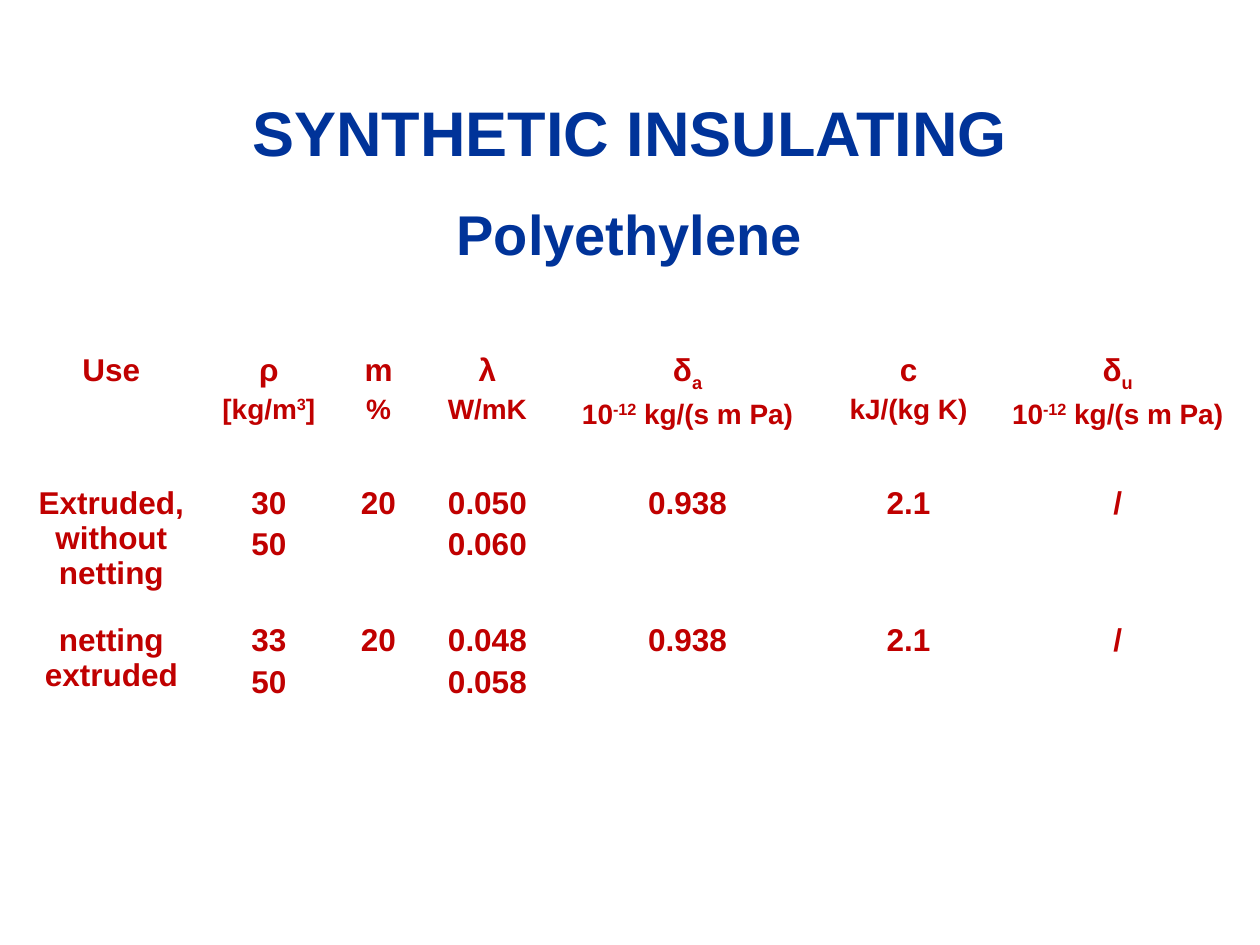
"""Build a slide with the properties of polyethylene insulation."""
from lxml.etree import SubElement as Sub
from pptx import Presentation as Deck
from pptx.dml.color import RGBColor as Rgb
from pptx.enum.text import MSO_ANCHOR as Anchor, PP_ALIGN as Align
from pptx.oxml.ns import qn
from pptx.util import Cm, Pt

BLUE, RED, WHITE = "003399", "C00000", "FFFFFF"
HEADS = [
    ("SYNTHETIC INSULATING", 36, (1.27, 1.91, 22.86, 1.47), Anchor.MIDDLE),
    ("Polyethylene", 32, (7.19, 3.89, 11, 1.6), Anchor.TOP),
]
PERM = [("10", 0), ("-12", 30), (" kg/(s m Pa)", 0)]
TOP = [
    ["Use"],
    ["ρ", [("[kg/m", 0), ("3", 30), ("]", 0)]],
    ["m", "%"],
    ["λ", "W/mK"],
    [[("δ", 0), ("a", -25)], PERM],
    ["c", "kJ/(kg K)"],
    [[("δ", 0), ("u", -25)], PERM],
]
BODY = [
    [["Extruded, without netting"], ["30", "50"], ["20"],
     ["0.050", "0.060"], ["0.938"], ["2.1"], ["/"]],
    [["netting extruded"], ["33", "50"], ["20"],
     ["0.048", "0.058"], ["0.938"], ["2.1"], ["/"]],
]
COLS = [3.63, 2.72, 1.7, 2.69, 5.38, 3.53, 4.9]
ROWS = [2.67, 2.77, 2.67]
LEFT, HIGH = 0.43, 6.99


def color(code):
    return Rgb.from_string(code)


def write(para, line, size, tint):
    para.alignment = Align.CENTER
    for text, base in [(line, 0)] if isinstance(line, str) else line:
        run = para.add_run()
        run.text = text
        font = run.font
        font.name, font.size, font.bold = "Arial", Pt(size), True
        font.color.rgb = color(tint)
        if base:
            run._r.get_or_add_rPr().set("baseline", str(base * 1000))


def edge(cell, side, width):
    line = Sub(cell._tc.get_or_add_tcPr(), qn("a:ln" + side), w=str(Pt(width)))
    Sub(Sub(line, qn("a:solidFill")), qn("a:srgbClr"), val=WHITE)


def fill(cell, lines, sizes):
    frame = cell.text_frame
    for i, (line, size) in enumerate(zip(lines, sizes)):
        para = frame.add_paragraph() if i else frame.paragraphs[0]
        para.space_before = Pt(size * 0.2)
        write(para, line, size, RED)


def main():
    deck = Deck()
    deck.slide_width, deck.slide_height = Cm(25.4), Cm(19.05)
    slide = deck.slides.add_slide(deck.slide_layouts[6])
    for text, size, spot, anchor in HEADS:
        frame = slide.shapes.add_textbox(*map(Cm, spot)).text_frame
        frame.word_wrap, frame.vertical_anchor = True, anchor
        write(frame.paragraphs[0], text, size, BLUE)

    grid = [TOP] + BODY
    spot = LEFT, HIGH, sum(COLS), sum(ROWS)
    table = slide.shapes.add_table(len(ROWS), len(COLS), *map(Cm, spot)).table
    table.first_row = table.horz_banding = False
    for col, width in zip(table.columns, COLS):
        col.width = Cm(width)
    for row, height in zip(table.rows, ROWS):
        row.height = Cm(height)
    for r, row in enumerate(grid):
        for c, lines in enumerate(row):
            cell = table.cell(r, c)
            fill(cell, lines, (18, 18) if r else (18, 16))
            outer = {"L": c == 0, "R": c == len(COLS) - 1,
                     "T": r == 0, "B": r == len(ROWS) - 1}
            for side, thick in outer.items():
                edge(cell, side, 2.25 if thick else 1)
            cell.fill.background()
    deck.save("out.pptx")


if __name__ == "__main__":
    main()
